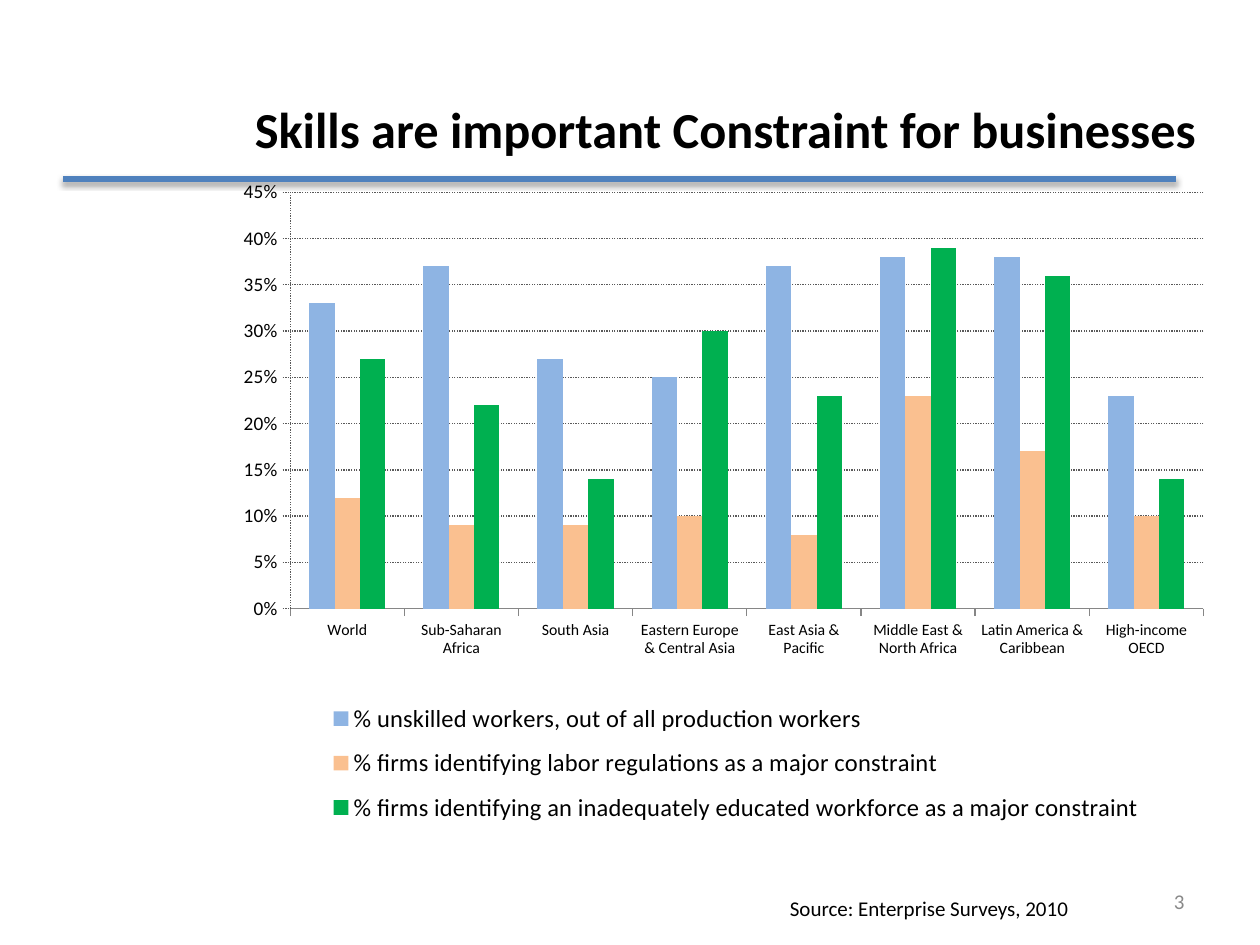
from dataclasses import dataclass

from lxml.etree import SubElement as Sub
from pptx import Presentation
from pptx.chart.data import CategoryChartData as Data
from pptx.dml.color import RGBColor
from pptx.enum.chart import XL_CHART_TYPE as Kind, XL_LEGEND_POSITION as Side
from pptx.enum.chart import XL_TICK_MARK as Tick
from pptx.enum.dml import MSO_LINE_DASH_STYLE as Dash
from pptx.enum.shapes import MSO_CONNECTOR as Link
from pptx.enum.text import MSO_ANCHOR as Anchor, PP_ALIGN as Align
from pptx.oxml import parse_xml
from pptx.oxml.ns import nsdecls, qn
from pptx.util import Inches, Pt

BLACK = RGBColor(0x00, 0x00, 0x00)
GRAY = RGBColor(0x89, 0x89, 0x89)
DARK = RGBColor(0x59, 0x59, 0x59)
AXIS = RGBColor(0x86, 0x86, 0x86)
RULE = RGBColor(0x4F, 0x81, 0xBD)
BLUE = RGBColor(0x8E, 0xB4, 0xE3)
PEACH = RGBColor(0xFA, 0xC0, 0x90)
GREEN = RGBColor(0x00, 0xB0, 0x50)
FACE = "Calibri"

# Grid of 100 columns by 75 rows
WIDE, HIGH = Inches(10), Inches(7.5)
COL, ROW = WIDE / 100, HIGH / 75


@dataclass
class Box:
    col: float
    row: float
    cols: float
    rows: float

    def rect(self) -> tuple:
        return (round(self.col * COL), round(self.row * ROW),
                round(self.cols * COL), round(self.rows * ROW))


@dataclass
class Label:
    text: str
    box: Box
    size: float
    color: RGBColor = BLACK
    align: Align = Align.LEFT
    anchor: Anchor = Anchor.TOP
    bold: bool = False


@dataclass
class Bars:
    name: str
    color: RGBColor
    vals: tuple


REGIONS = ("World", "Sub-Saharan Africa", "South Asia",
           "Eastern Europe & Central Asia", "East Asia & Pacific",
           "Middle East & North Africa", "Latin America & Caribbean",
           "High-income OECD")
SERIES = (
    Bars("% unskilled workers, out of all production workers", BLUE,
         (.33, .37, .27, .25, .37, .38, .38, .23)),
    Bars("% firms identifying labor regulations as a major constraint", PEACH,
         (.12, .09, .09, .10, .08, .23, .17, .10)),
    Bars("% firms identifying an inadequately educated workforce "
         "as a major constraint", GREEN,
         (.27, .22, .14, .30, .23, .39, .36, .14)),
)
TITLE = Label("Skills are important Constraint for businesses",
              Box(17.7, 5, 79.8, 10.3), 28.8, align=Align.CENTER,
              anchor=Anchor.MIDDLE, bold=True)
NOTES = (
    Label("Source: Enterprise Surveys, 2010", Box(61.7, 70.6, 35.8, 3), 12),
    Label("3", Box(71.7, 69.5, 23.3, 4), 12, GRAY, Align.RIGHT, Anchor.MIDDLE),
)


def style(font, size: float, color: RGBColor = BLACK) -> None:
    font.name, font.size = FACE, Pt(size)
    font.color.rgb = color


def write(shape, label: Label) -> None:
    shape.left, shape.top, shape.width, shape.height = label.box.rect()
    frame = shape.text_frame
    frame.word_wrap = True
    frame.vertical_anchor = label.anchor
    para = frame.paragraphs[0]
    para.alignment = label.align
    run = para.add_run()
    run.text = label.text
    style(run.font, label.size, label.color)
    run.font.bold = label.bold


def dot(line) -> None:
    line.color.rgb, line.width = DARK, Pt(0.75)
    line.dash_style = Dash.ROUND_DOT


def place(owner, x: float, y: float, w: float, h: float,
          inner: bool = False) -> None:
    """Set a manual layout in shares of the chart's size."""
    node = owner.find(qn("c:layout"))
    if node is None:
        node = parse_xml(f"<c:layout {nsdecls('c')}/>")
        if inner:
            owner.insert(0, node)
        else:
            owner.find(qn("c:legendPos")).addnext(node)
    for old in list(node):
        node.remove(old)
    man = Sub(node, qn("c:manualLayout"))
    parts = [("layoutTarget", "inner")] if inner else []
    parts += [("xMode", "edge"), ("yMode", "edge"),
              ("x", x), ("y", y), ("w", w), ("h", h)]
    for tag, val in parts:
        Sub(man, qn(f"c:{tag}")).set("val", str(val))


def plot(slide, box: Box) -> None:
    data = Data(number_format="0%")
    data.categories = REGIONS
    for bars in SERIES:
        data.add_series(bars.name, bars.vals)
    chart = slide.shapes.add_chart(
        Kind.COLUMN_CLUSTERED, *box.rect(), data).chart
    style(chart.font, 10)
    chart.has_title = False

    # Columns
    cols = chart.plots[0]
    cols.gap_width, cols.overlap = 150, 0
    cols.vary_by_categories = False
    for bars, ser in zip(SERIES, cols.series):
        ser.format.fill.solid()
        ser.format.fill.fore_color.rgb = bars.color
        ser.invert_if_negative = False

    # Axes
    cat, val = chart.category_axis, chart.value_axis
    style(cat.tick_labels.font, 9)
    style(val.tick_labels.font, 11)
    cat.major_tick_mark = val.major_tick_mark = Tick.OUTSIDE
    cat.format.line.color.rgb = AXIS
    val.minimum_scale, val.maximum_scale, val.major_unit = 0, 0.45, 0.05
    val.tick_labels.number_format = "0%"
    val.tick_labels.number_format_is_linked = False
    val.has_major_gridlines = True
    dot(val.format.line)
    dot(val.major_gridlines.format.line)

    # Legend under the columns
    chart.has_legend = True
    key = chart.legend
    key.position, key.include_in_layout = Side.RIGHT, False
    style(key.font, 14)
    area = chart.element.find(".//" + qn("c:plotArea"))
    place(area, 0.1, 0.02, 0.86, 0.62, inner=True)
    place(chart.element.find(".//" + qn("c:legend")), 0.12, 0.76, 0.8, 0.22)


def rule(slide, start: float, end: float, row: float) -> None:
    y = round(row * ROW)
    line = slide.shapes.add_connector(
        Link.STRAIGHT, round(start * COL), y, round(end * COL), y)
    line.line.color.rgb, line.line.width = RULE, Pt(3)
    glow = Sub(line.element.spPr, qn("a:effectLst"))
    cast = Sub(glow, qn("a:outerShdw"), blurRad=str(Pt(3.1)),
               dist=str(Pt(1.8)), dir="5400000", rotWithShape="0")
    tint = Sub(cast, qn("a:srgbClr"), val=str(BLACK))
    Sub(tint, qn("a:alpha"), val="35000")


def main() -> None:
    deck = Presentation()
    deck.slide_width, deck.slide_height = WIDE, HIGH
    slide = deck.slides.add_slide(deck.slide_layouts[5])
    write(slide.shapes.title, TITLE)
    plot(slide, Box(14.6, 14.2, 84.3, 53.3))
    rule(slide, 5, 93.3, 14.2)
    for note in NOTES:
        write(slide.shapes.add_textbox(*note.box.rect()), note)
    deck.save("out.pptx")


if __name__ == "__main__":
    main()
